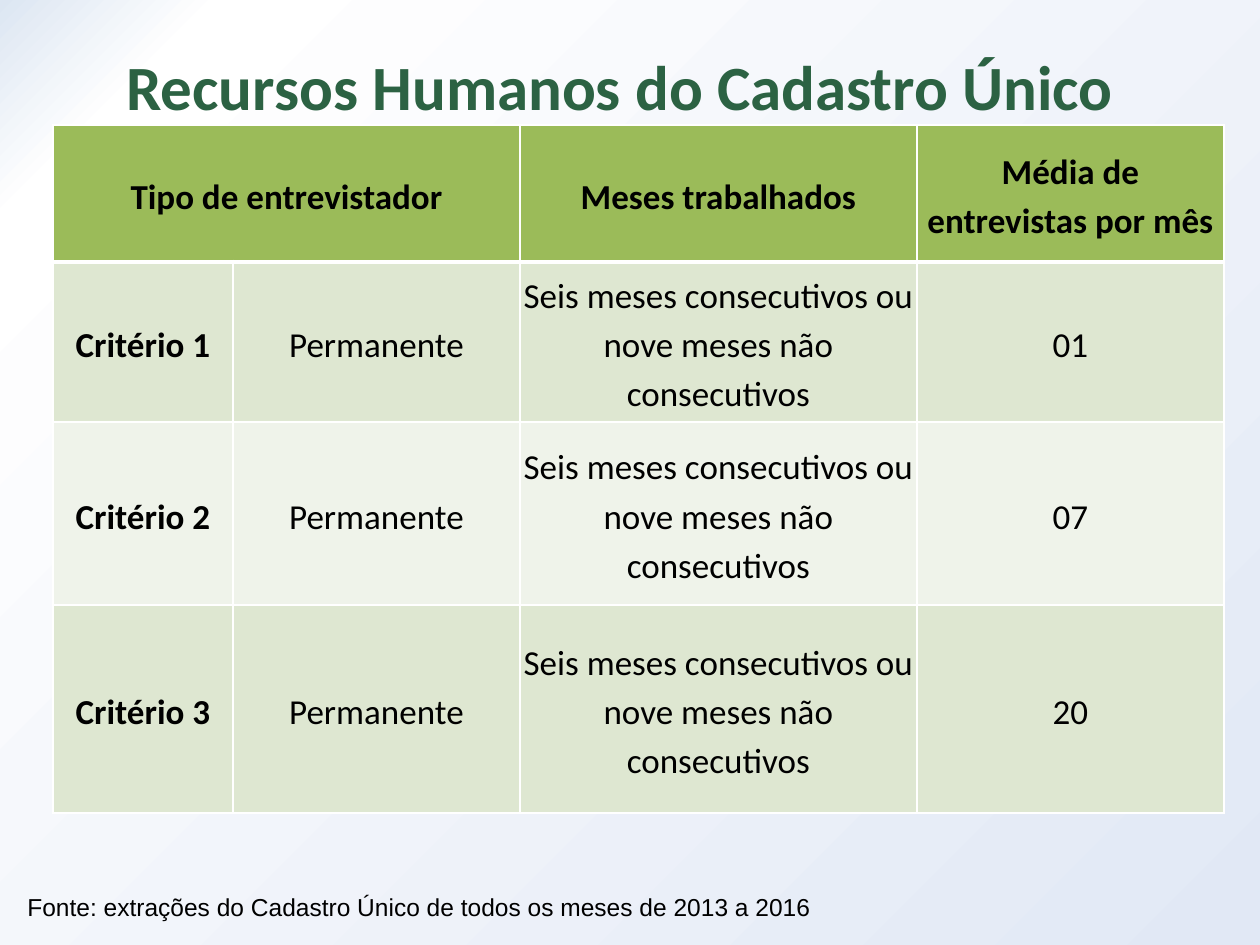
"""Build the slide on human resources of the Cadastro Único."""
from copy import deepcopy

from lxml import etree
from pptx import Presentation
from pptx.dml.color import RGBColor
from pptx.enum.text import MSO_ANCHOR, PP_ALIGN
from pptx.oxml.ns import qn
from pptx.util import Pt

MIDDLE = MSO_ANCHOR.MIDDLE
TOP = MSO_ANCHOR.TOP
CENTER = PP_ALIGN.CENTER
LEFT = PP_ALIGN.LEFT
SCALE = 914400 // 126
COLORS = {
    "title": "2C6243",
    "text": "000000",
    "border": "FFFFFF",
    "header": "9BBB59",
    "odd_row": "DEE7D1",
    "even_row": "EFF3EA",
}
BACKGROUND_STOPS = [(0, "DCE6F2"), (0.1, "FFFFFF"), (1, "E1E8F5")]
PERIOD = "Seis meses consecutivos ou nove meses não consecutivos"
HEADER = ["Tipo de entrevistador", "", "Meses trabalhados", "Média de entrevistas por mês"]
AVERAGES = ["01", "07", "20"]
COLUMN_WIDTHS = [180, 287, 397, 307]
ROW_HEIGHTS = [137, 160, 183, 208]


def write_text(text_frame, text, font_name, size, color, bold=False, alignment=LEFT):
    paragraph = text_frame.paragraphs[0]
    paragraph.text = text
    paragraph.alignment = alignment
    paragraph.font.name = font_name
    paragraph.font.size = Pt(size)
    paragraph.font.bold = bold
    paragraph.font.color.rgb = RGBColor.from_string(COLORS[color])
    return paragraph


def add_border(cell, side, width):
    properties = cell._tc.get_or_add_tcPr()
    line = etree.SubElement(properties, qn(f"a:ln{side}"), w=str(Pt(width)))
    fill = etree.SubElement(line, qn("a:solidFill"))
    etree.SubElement(fill, qn("a:srgbClr"), val=COLORS["border"])


presentation = Presentation()
presentation.slide_width = 1260 * SCALE
presentation.slide_height = 945 * SCALE
slide = presentation.slides.add_slide(presentation.slide_layouts[6])

background = slide.background.fill
background.gradient()
background.gradient_angle = 315
stop_list = slide.element.find(".//" + qn("a:gsLst"))
stop_list.append(deepcopy(stop_list[0]))
for stop, (position, color) in zip(background.gradient_stops, BACKGROUND_STOPS):
    stop.position = position
    stop.color.rgb = RGBColor.from_string(color)

text_boxes = [
    ((15, 886, 1211, 43), TOP,
     ("Fonte: extrações do Cadastro Único de todos os meses de 2013 a 2016",
      "Arial", 14, "text")),
    ((53, 6, 1134, 158), MIDDLE,
     ("Recursos Humanos do Cadastro Único", "Calibri", 36, "title", True, CENTER)),
]
for box, anchor, content in text_boxes:
    shape = slide.shapes.add_textbox(*(length * SCALE for length in box))
    shape.text_frame.word_wrap = True
    shape.text_frame.vertical_anchor = anchor
    write_text(shape.text_frame, *content)

rows = [HEADER] + [
    [f"Critério {number}", "Permanente", PERIOD, average]
    for number, average in enumerate(AVERAGES, 1)
]
table = slide.shapes.add_table(
    len(rows), len(HEADER), 53 * SCALE, 125 * SCALE,
    sum(COLUMN_WIDTHS) * SCALE, sum(ROW_HEIGHTS) * SCALE,
).table
for column, width in zip(table.columns, COLUMN_WIDTHS):
    column.width = width * SCALE
for row, height in zip(table.rows, ROW_HEIGHTS):
    row.height = height * SCALE
table.cell(0, 0).merge(table.cell(0, 1))

for row_index, texts in enumerate(rows):
    is_header = row_index == 0
    row_color = "header" if is_header else "odd_row" if row_index % 2 else "even_row"
    for column_index, text in enumerate(texts):
        cell = table.cell(row_index, column_index)
        cell.vertical_anchor = MIDDLE
        side_margin = 6 if is_header or column_index < 2 else 1
        cell.margin_left = cell.margin_right = side_margin * SCALE
        cell.margin_top = SCALE
        cell.margin_bottom = 0
        bold = is_header or column_index == 0
        paragraph = write_text(cell.text_frame, text, "Calibri", 20, "text", bold, CENTER)
        paragraph.line_spacing = 1.15
        add_border(cell, "L", 1)
        add_border(cell, "R", 1)
        add_border(cell, "T", 3 if row_index == 1 else 1)
        add_border(cell, "B", 3 if is_header else 1)
        cell.fill.solid()
        cell.fill.fore_color.rgb = RGBColor.from_string(COLORS[row_color])

presentation.save("out.pptx")
